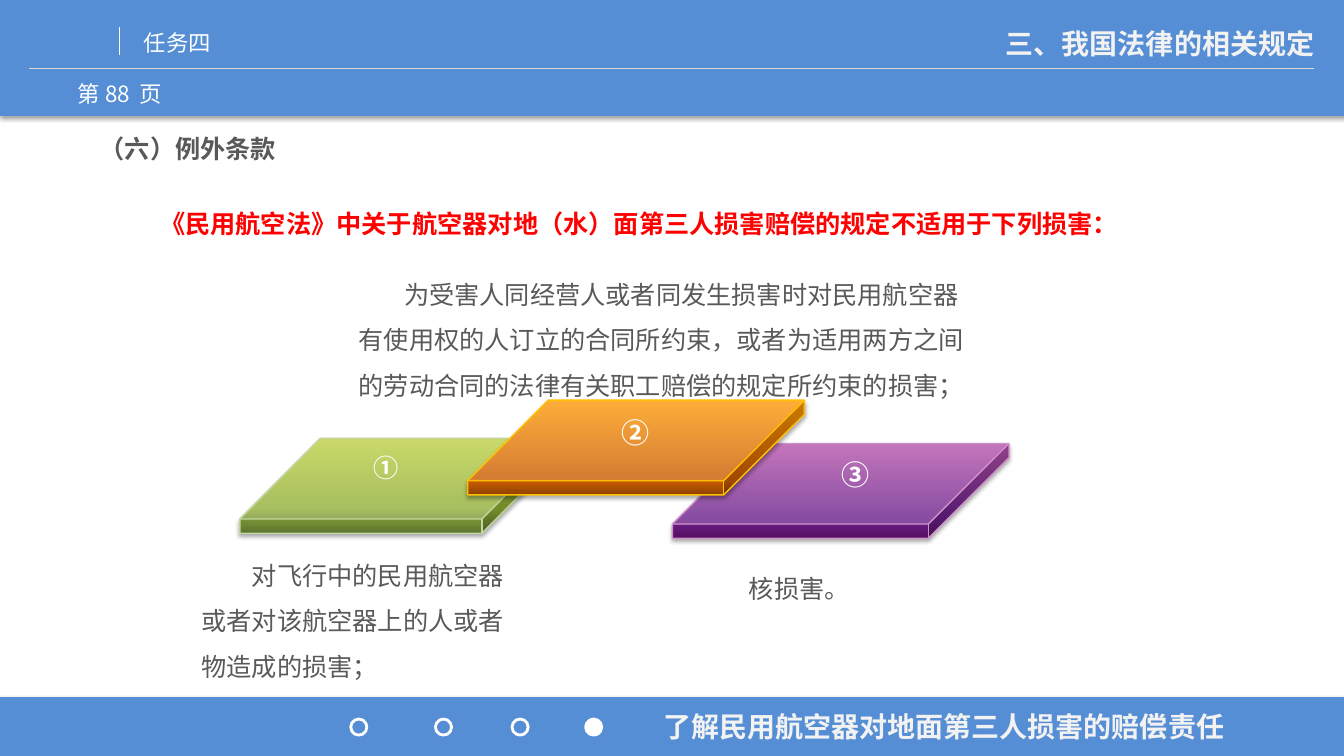
from copy import deepcopy
from dataclasses import dataclass

from lxml import etree
from pptx import Presentation
from pptx import util as u
from pptx.dml.color import RGBColor
from pptx.enum import shapes, text
from pptx.oxml import ns

COLUMNS, ROWS = 160, 90


@dataclass(frozen=True)
class Theme:
    font: str = "Noto Sans CJK SC"
    band: str = "558ED5"
    white: str = "FFFFFF"
    pale: str = "F2F2F2"
    rule: str = "D9D9D9"
    body: str = "595959"
    alert: str = "FF0000"
    small: int = 16
    normal: int = 18
    large: int = 20


@dataclass(frozen=True)
class Box:
    """An area in grid columns and rows."""
    left: float
    top: float
    width: float
    height: float


@dataclass(frozen=True)
class Shadow:
    alpha: int
    blur: float
    distance: float


@dataclass(frozen=True)
class Caption:
    words: str
    box: Box
    size: int
    color: str
    bold: bool = False
    align: str = "LEFT"
    spacing: float = 1.0
    indent: float = 0


@dataclass(frozen=True)
class Slab:
    box: Box
    stops: tuple[tuple[float, str], ...]
    edge: str


THEME = Theme()
BAND_SHADOW = Shadow(35, 3.1, 1.8)
SLAB_SHADOW = Shadow(32, 3, 2)

prs = Presentation()
prs.slide_width, prs.slide_height = u.Inches(13.33), u.Inches(7.5)
slide = prs.slides.add_slide(prs.slide_layouts[5])


def col(count: float) -> int:
    return round(prs.slide_width * count / COLUMNS)


def row(count: float) -> int:
    return round(prs.slide_height * count / ROWS)


def area(box: Box) -> tuple[int, int, int, int]:
    return col(box.left), row(box.top), col(box.width), row(box.height)


def rgb(color: str) -> RGBColor:
    return RGBColor.from_string(color)


def add_plain(kind, box: Box):
    shape = slide.shapes.add_shape(kind, *area(box))
    shape.shadow.inherit = False
    return shape


def cast_shadow(shape, shadow: Shadow) -> None:
    effects = shape._element.spPr.find(ns.qn("a:effectLst"))
    outer = etree.SubElement(
        effects, ns.qn("a:outerShdw"), blurRad=str(u.Pt(shadow.blur)),
        dist=str(u.Pt(shadow.distance)), dir="5400000", rotWithShape="0")
    black = etree.SubElement(outer, ns.qn("a:srgbClr"), val="000000")
    etree.SubElement(black, ns.qn("a:alpha"), val=str(shadow.alpha * 1000))


def add_band(box: Box) -> None:
    band = add_plain(shapes.MSO_SHAPE.RECTANGLE, box)
    band.fill.solid()
    band.fill.fore_color.rgb = rgb(THEME.band)
    band.line.fill.background()
    cast_shadow(band, BAND_SHADOW)


def add_rule(x1: float, y1: float, x2: float, y2: float, color: str) -> None:
    rule = slide.shapes.add_connector(
        shapes.MSO_CONNECTOR.STRAIGHT, col(x1), row(y1), col(x2), row(y2))
    rule.line.color.rgb = rgb(color)
    rule.line.width = u.Pt(0.75)
    etree.SubElement(rule._element.spPr, ns.qn("a:effectLst"))


def add_dot(left: float, filled: bool) -> None:
    dot = add_plain(shapes.MSO_SHAPE.OVAL, Box(left, 85.6, 1.92, 1.92))
    if filled:
        dot.fill.solid()
        dot.fill.fore_color.rgb = rgb(THEME.white)
    else:
        dot.fill.background()
    dot.line.color.rgb = rgb(THEME.white)
    dot.line.width = u.Pt(2)


def add_slab(slab: Slab) -> None:
    cube = add_plain(shapes.MSO_SHAPE.CUBE, slab.box)
    cube.adjustments[0] = 0.85
    cube.fill.gradient()
    cube.fill.gradient_angle = 90
    stop_list = next(cube._element.spPr.iter(ns.qn("a:gsLst")))
    stop_list.append(deepcopy(stop_list[-1]))
    for stop, (position, color) in zip(cube.fill.gradient_stops, slab.stops):
        stop.position = position
        stop.color.rgb = rgb(color)
    cube.line.color.rgb = rgb(slab.edge)
    cube.line.width = u.Pt(1)
    cast_shadow(cube, SLAB_SHADOW)


def write(holder, caption: Caption) -> None:
    holder.left, holder.top, holder.width, holder.height = area(caption.box)
    frame = holder.text_frame
    frame.word_wrap = True
    frame.auto_size = text.MSO_AUTO_SIZE.SHAPE_TO_FIT_TEXT
    frame.vertical_anchor = text.MSO_ANCHOR.TOP
    paragraph = frame.paragraphs[0]
    paragraph.alignment = text.PP_ALIGN[caption.align]
    paragraph.line_spacing = caption.spacing
    if caption.indent:
        paragraph._p.get_or_add_pPr().set("indent", str(col(caption.indent)))
    run = paragraph.add_run()
    run.text = caption.words
    run.font.size = u.Pt(caption.size)
    run.font.bold = caption.bold
    run.font.color.rgb = rgb(caption.color)
    run.font.name = THEME.font
    etree.SubElement(run.font._element, ns.qn("a:ea"), typeface=THEME.font)


def add_caption(caption: Caption) -> None:
    write(slide.shapes.add_textbox(*area(caption.box)), caption)


SECTION = Caption("三、我国法律的相关规定", Box(97.08, 2.52, 60.6, 5.28),
                  THEME.large, THEME.pale, True, "RIGHT")
FRAME_CAPTIONS = (
    Caption("第 88  页", Box(7.08, 9, 14.4, 4.8), THEME.small, THEME.white, align="CENTER"),
    Caption("任务四", Box(15.96, 2.88, 39.12, 4.44), THEME.small, THEME.white),
    Caption("了解民用航空器对地面第三人损害的赔偿责任", Box(77.76, 83.88, 73.56, 5.28),
            THEME.large, THEME.pale, True),
)
SLABS = (
    Slab(Box(80.04, 52.8, 40.08, 11.28),
         ((0, "570F63"), (0.2, "6A218B"), (1, "B553A9")), "D090C8"),
    Slab(Box(28.56, 52.2, 38.4, 11.28),
         ((0, "5D7330"), (0.27, "92AF37"), (1, "BCD044")), "C3D69B"),
    Slab(Box(55.68, 47.64, 40.08, 11.28),
         ((0, "8D4000"), (0.14, "C85B00"), (1, "FD9907")), "FFC000"),
)
CONTENT_CAPTIONS = (
    Caption("（六）例外条款", Box(10.68, 14.04, 52.56, 5.64),
            THEME.normal, THEME.body, True, spacing=1.35),
    Caption("《民用航空法》中关于航空器对地（水）面第三人损害赔偿的规定不适用于下列损害：",
            Box(12.48, 22.44, 128.4, 6.72), THEME.normal, THEME.alert, True,
            spacing=1.5, indent=5.4),
    Caption("①", Box(35.16, 53.28, 21.72, 4.8), THEME.normal, THEME.white, True, "CENTER"),
    Caption("②", Box(64.8, 48.84, 21.72, 5.28), THEME.large, THEME.white, True, "CENTER"),
    Caption("③", Box(90.96, 53.88, 21.72, 5.28), THEME.large, THEME.white, True, "CENTER"),
    Caption("对飞行中的民用航空器或者对该航空器上的人或者物造成的损害；",
            Box(22.8, 64.32, 38.4, 16.92), THEME.normal, THEME.body, spacing=1.5, indent=6),
    Caption("为受害人同经营人或者同发生损害时对民用航空器有使用权的人订立的合同所约束，"
            "或者为适用两方之间的劳动合同的法律有关职工赔偿的规定所约束的损害；",
            Box(41.52, 30.84, 75, 17.52), THEME.normal, THEME.body, spacing=1.5, indent=5.4),
    Caption("核损害。", Box(80.04, 66.6, 30.24, 5.52), THEME.normal, THEME.body,
            align="CENTER", spacing=1.3),
)

# Header and footer bands
add_band(Box(0, 0, COLUMNS, 13.8))
add_band(Box(0, 83, COLUMNS, 7))
add_rule(3.48, 8.16, 156.48, 8.16, THEME.rule)
add_rule(14.28, 3.24, 14.28, 6.6, THEME.white)

# Section title, raised above the header band
section_title = slide.shapes.title
slide.shapes._spTree.append(section_title._element)
write(section_title, SECTION)
for frame_caption in FRAME_CAPTIONS:
    add_caption(frame_caption)

# Progress dots, the last one current
for dot_left in (41.76, 51.84, 60.96, 69.72):
    add_dot(dot_left, filled=dot_left == 69.72)

# Three exceptions: slabs, then their numbers and wording
for exception_slab in SLABS:
    add_slab(exception_slab)
for content_caption in CONTENT_CAPTIONS:
    add_caption(content_caption)

prs.save("out.pptx")
